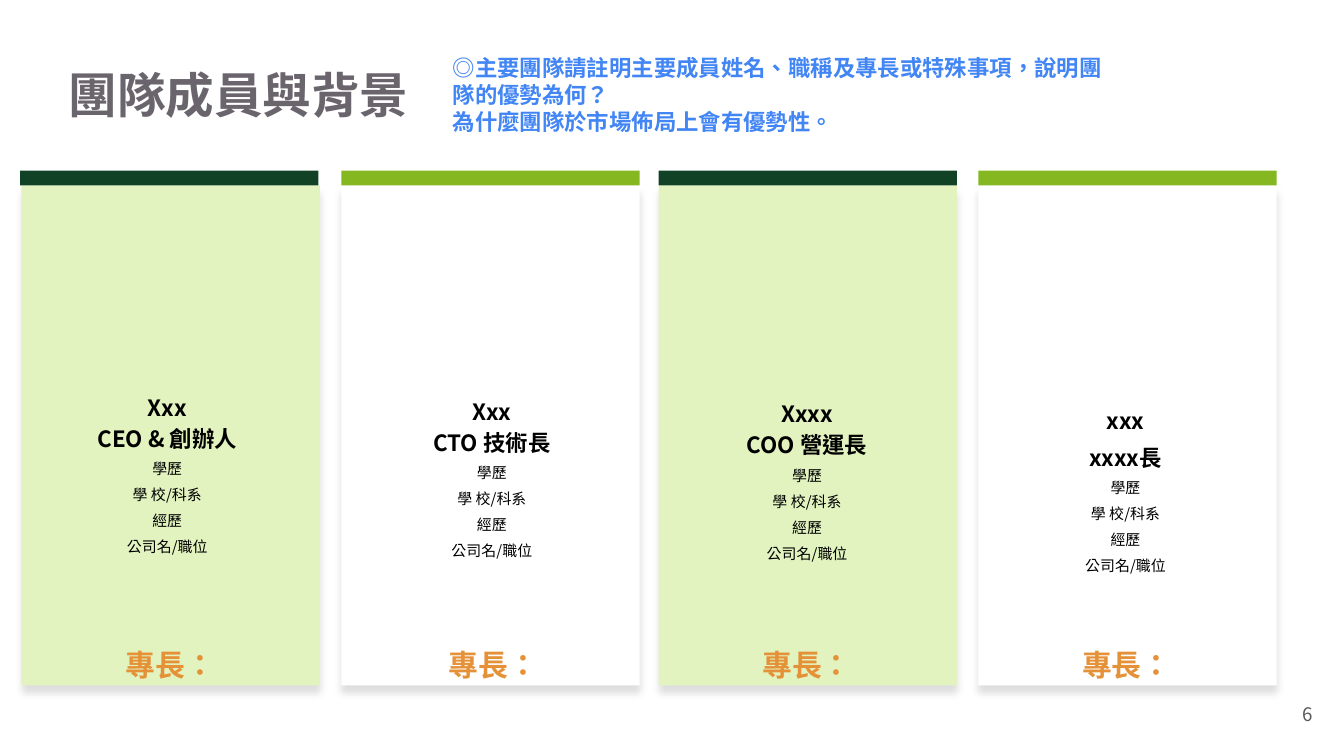
from lxml.etree import SubElement
from pptx import Presentation
from pptx.dml.color import RGBColor
from pptx.enum.shapes import MSO_SHAPE
from pptx.enum.text import MSO_ANCHOR, MSO_AUTO_SIZE, PP_ALIGN
from pptx.oxml.ns import qn
from pptx.util import Inches, Pt

FONT = "Noto Sans CJK SC"
COLORS = {
    "title": "6A656D",
    "hint": "4285F4",
    "text": "000000",
    "skill": "E59138",
    "number": "595959",
    "dark_green": "114225",
    "green": "85B721",
    "pale_green": "E2F3BF",
    "white": "FFFFFF",
}
CARD_WIDTH = 2.22
BACKGROUND = ["學歷", "學 校/科系", "經歷", "公司名/職位"]
# card left, bar left, card colour, bar colour, profile box,
# name, role, heading line spacing, skill left, skill width
MEMBERS = [
    (0.16, 0.15, "pale_green", "dark_green", (0.13, 2.8, 2.23, 1.45),
     "Xxx", "CEO & 創辦人", 1.15, 0.16, 2.22),
    (2.54, 2.54, "white", "green", (2.55, 2.83, 2.22, 1.45),
     "Xxx", "CTO 技術長", 1.15, 2.48, 2.38),
    (4.9, 4.9, "pale_green", "dark_green", (4.89, 2.85, 2.23, 1.45),
     "Xxxx", "COO 營運長", 1.15, 4.89, 2.23),
    (7.28, 7.28, "white", "green", (7.26, 2.85, 2.23, 1.54),
     "xxx", "xxxx長", 1.38, 7.27, 2.23),
]


def rgb(name):
    return RGBColor.from_string(COLORS[name])


def format_paragraph(paragraph, size, color, bold=True, align=PP_ALIGN.LEFT, spacing=1.0):
    paragraph.alignment = align
    paragraph.line_spacing = spacing
    paragraph.space_before = Pt(0)
    font = paragraph.font
    font.size = Pt(size)
    font.bold = bold
    font.name = FONT
    font.color.rgb = rgb(color)
    properties = paragraph._p.pPr.find(qn("a:defRPr"))
    properties.set("lang", "zh-TW")
    SubElement(properties, qn("a:ea"), typeface=FONT)
    for run in paragraph.runs:
        run._r.get_or_add_rPr().set("lang", "zh-TW")


def format_frame(frame, inset_x, inset_y, anchor=MSO_ANCHOR.TOP, grow=True):
    frame.word_wrap = True
    frame.auto_size = MSO_AUTO_SIZE.SHAPE_TO_FIT_TEXT if grow else MSO_AUTO_SIZE.NONE
    frame.vertical_anchor = anchor
    frame.margin_left = frame.margin_right = Inches(inset_x)
    frame.margin_top = frame.margin_bottom = Inches(inset_y)


def add_text(slide, left, top, width, height, lines, inset_y=0.1, **frame_options):
    """Add a text box; each line is a text with its paragraph format."""
    box = slide.shapes.add_textbox(Inches(left), Inches(top), Inches(width), Inches(height))
    frame = box.text_frame
    format_frame(frame, 0.1, inset_y, **frame_options)
    for index, (text, options) in enumerate(lines):
        paragraph = frame.add_paragraph() if index else frame.paragraphs[0]
        paragraph.text = text
        format_paragraph(paragraph, **options)


def add_rectangle(slide, left, top, height, color):
    shape = slide.shapes.add_shape(
        MSO_SHAPE.RECTANGLE, Inches(left), Inches(top), Inches(CARD_WIDTH), Inches(height))
    shape.shadow.inherit = False
    shape.fill.solid()
    shape.fill.fore_color.rgb = rgb(color)
    shape.line.fill.background()
    return shape


def add_soft_shadow(shape):
    effects = shape._element.spPr.find(qn("a:effectLst"))
    shadow = SubElement(effects, qn("a:outerShdw"), blurRad=str(Pt(4)), dist=str(Pt(4)),
                        dir="5400000", algn="t", rotWithShape="0")
    color = SubElement(shadow, qn("a:srgbClr"), val=COLORS["text"])
    SubElement(color, qn("a:alpha"), val="12000")


def add_title(slide, text):
    title = slide.shapes.title
    title.left, title.top = Inches(0.51), Inches(0.48)
    title.width, title.height = Inches(2.76), Inches(0.44)
    format_frame(title.text_frame, 0, 0)
    title.text_frame.text = text
    format_paragraph(title.text_frame.paragraphs[0], 26, "title")


def add_member(slide, card_left, bar_left, card_color, bar_color, profile_box,
               name, role, spacing, skill_left, skill_width):
    add_soft_shadow(add_rectangle(slide, card_left, 1.38, 3.72, card_color))
    add_rectangle(slide, bar_left, 1.27, 0.11, bar_color)
    centre = {"align": PP_ALIGN.CENTER}
    heading = {"size": 12, "color": "text", "spacing": spacing, **centre}
    detail = {"size": 8, "color": "text", "bold": False, "spacing": 1.45, **centre}
    lines = [(name, heading), (role, heading)] + [(text, detail) for text in BACKGROUND]
    add_text(slide, *profile_box, lines)
    skill = {"size": 16, "color": "skill", "spacing": 1.38, **centre}
    add_text(slide, skill_left, 4.61, skill_width, 0.57, [("專長：", skill)])


def main():
    presentation = Presentation()
    presentation.slide_width = Inches(10)
    presentation.slide_height = Inches(10 * 9 / 16)
    slide = presentation.slides.add_slide(presentation.slide_layouts[5])
    add_title(slide, "團隊成員與背景")
    hint = ("◎主要團隊請註明主要成員姓名、職稱及專長或特殊事項，說明團隊的優勢為何？\v"
            "為什麼團隊於市場佈局上會有優勢性。")
    add_text(slide, 3.27, 0.35, 5.14, 0.71, [(hint, {"size": 12, "color": "hint"})],
             inset_y=0.05, anchor=MSO_ANCHOR.MIDDLE)
    for member in MEMBERS:
        add_member(slide, *member)
    number = {"size": 10, "color": "number", "bold": False, "align": PP_ALIGN.RIGHT}
    add_text(slide, 9.27, 5.1, 0.6, 0.43, [("6", number)],
             anchor=MSO_ANCHOR.MIDDLE, grow=False)
    presentation.save("out.pptx")


if __name__ == "__main__":
    main()
